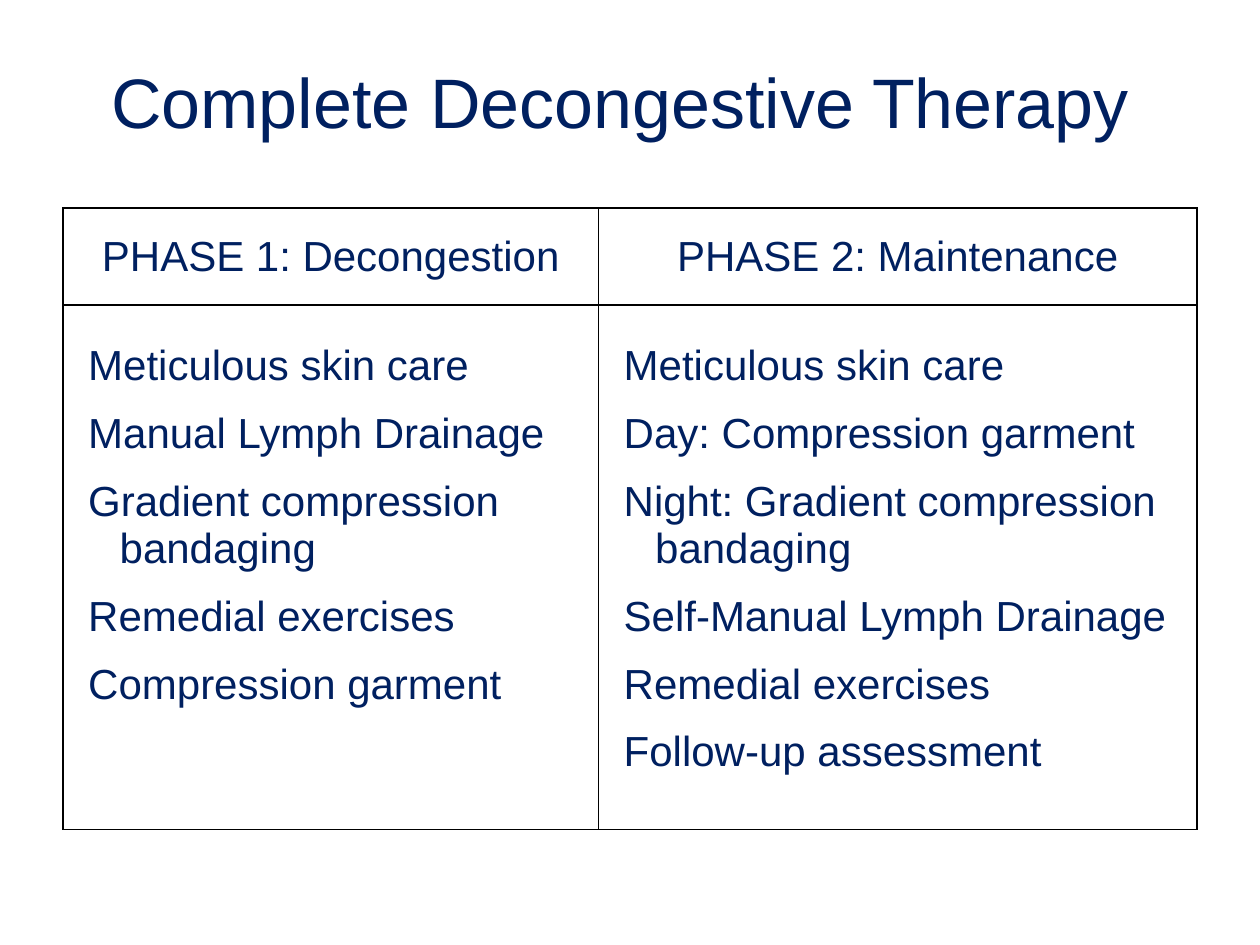
from lxml.etree import SubElement
from pptx import Presentation
from pptx.dml.color import RGBColor
from pptx.enum.text import MSO_ANCHOR, PP_ALIGN
from pptx.oxml.ns import qn
from pptx.util import Inches, Pt

COLORS = {"text": "002060", "border": "000000"}
FONT = "Arial"

PHASES = {
    "PHASE 1: Decongestion": [
        "Meticulous skin care",
        "Manual Lymph Drainage",
        "Gradient compression bandaging",
        "Remedial exercises",
        "Compression garment",
    ],
    "PHASE 2: Maintenance": [
        "Meticulous skin care",
        "Day: Compression garment",
        "Night: Gradient compression bandaging",
        "Self-Manual Lymph Drainage",
        "Remedial exercises",
        "Follow-up assessment",
    ],
}


class SlideBuilder:
    def __init__(self, presentation):
        self.slide = presentation.slides.add_slide(presentation.slide_layouts[5])

    def add_run(self, paragraph, text, size):
        run = paragraph.add_run()
        run.text = text
        run.font.name = FONT
        run.font.size = Pt(size)
        run.font.bold = False
        run.font.color.rgb = RGBColor.from_string(COLORS["text"])

    def add_title(self, text, left, top, width, height):
        title = self.slide.shapes.title
        title.left, title.top = Inches(left), Inches(top)
        title.width, title.height = Inches(width), Inches(height)
        title.text_frame.vertical_anchor = MSO_ANCHOR.MIDDLE
        paragraph = title.text_frame.paragraphs[0]
        paragraph.alignment = PP_ALIGN.CENTER
        self.add_run(paragraph, text, 40)

    def add_table(self, left, top, widths, heights):
        shape = self.slide.shapes.add_table(
            len(heights), len(widths), Inches(left), Inches(top),
            Inches(sum(widths)), Inches(sum(heights)))
        table = shape.table
        table.horz_banding = False
        for column, width in zip(table.columns, widths):
            column.width = Inches(width)
        for row, height in zip(table.rows, heights):
            row.height = Inches(height)
        return table

    def format_cell(self, cell, margins, anchor):
        (cell.margin_left, cell.margin_top,
         cell.margin_right, cell.margin_bottom) = map(Inches, margins)
        cell.vertical_anchor = anchor
        # Borders come before the fill in the cell properties
        properties = cell._tc.get_or_add_tcPr()
        for side in ("a:lnL", "a:lnR", "a:lnT", "a:lnB"):
            line = SubElement(properties, qn(side), w=str(Pt(1)))
            fill = SubElement(line, qn("a:solidFill"))
            SubElement(fill, qn("a:srgbClr"), val=COLORS["border"])
        cell.fill.background()

    def add_header(self, cell, text):
        self.format_cell(cell, (0.1, 0.2, 0.1, 0.2), MSO_ANCHOR.MIDDLE)
        paragraph = cell.text_frame.paragraphs[0]
        paragraph.alignment = PP_ALIGN.CENTER
        self.add_run(paragraph, text, 24)

    def add_list(self, cell, items):
        self.format_cell(cell, (0.2, 0.3, 0.1, 0.05), MSO_ANCHOR.TOP)
        frame = cell.text_frame
        for index, item in enumerate(items):
            paragraph = frame.add_paragraph() if index else frame.paragraphs[0]
            if index:
                paragraph.space_before = Pt(12)
            # Hanging indent
            properties = paragraph._p.get_or_add_pPr()
            properties.set("marL", str(Inches(0.25)))
            properties.set("indent", str(-Inches(0.25)))
            self.add_run(paragraph, item, 24)


def main():
    presentation = Presentation()
    presentation.slide_width = Inches(10)
    presentation.slide_height = Inches(7.5)
    builder = SlideBuilder(presentation)

    # Title
    builder.add_title("Complete Decongestive Therapy", 0.67, 0.17, 8.5, 1.25)

    # Table of the two phases
    table = builder.add_table(0.5, 1.65, (4.25, 4.75), (0.77, 4.16))
    for column, (phase, steps) in enumerate(PHASES.items()):
        builder.add_header(table.cell(0, column), phase)
        builder.add_list(table.cell(1, column), steps)

    presentation.save("out.pptx")


if __name__ == "__main__":
    main()
